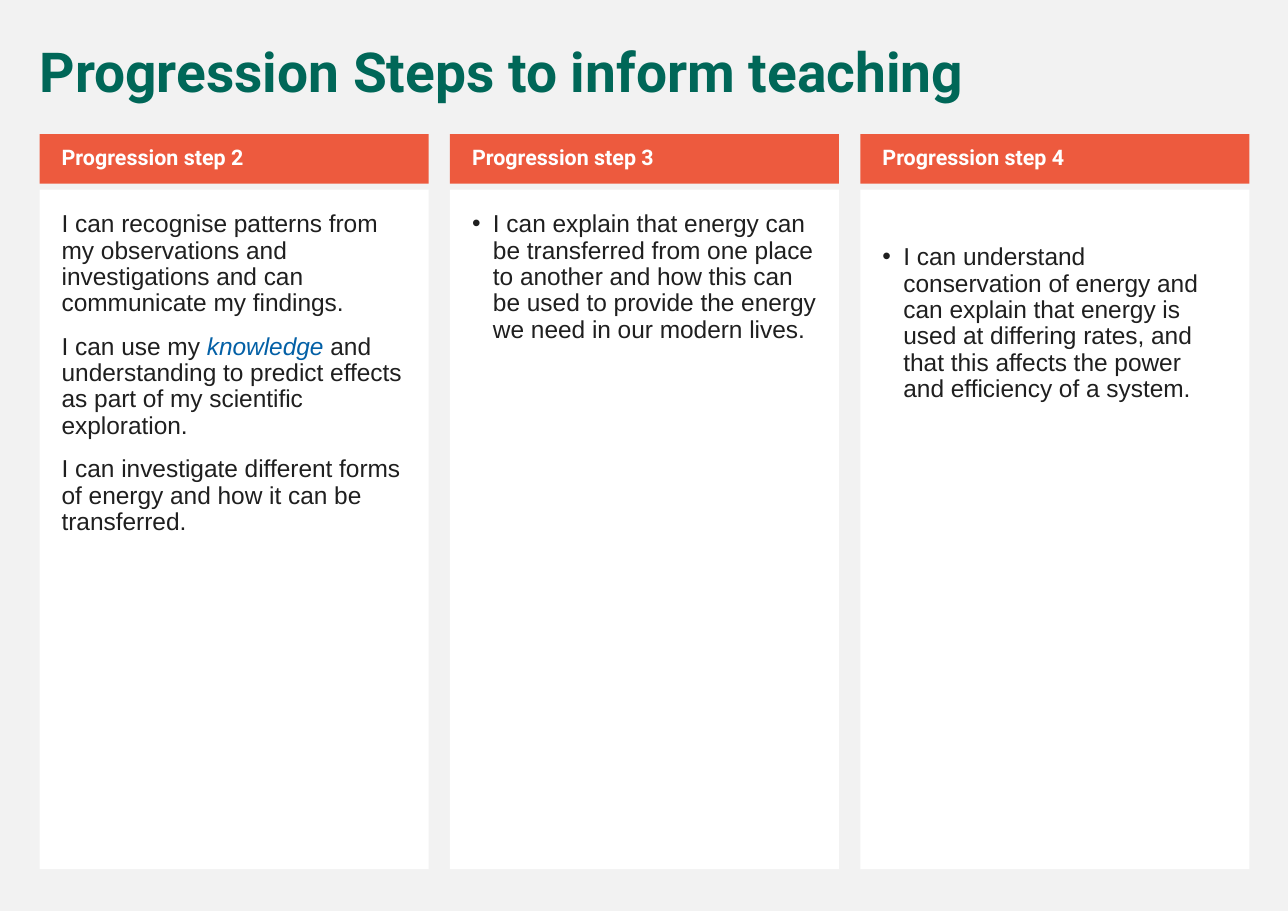
from lxml.etree import SubElement
from pptx import Presentation
from pptx.dml.color import RGBColor as RGB
from pptx.enum.shapes import MSO_SHAPE as Shape
from pptx.enum.text import MSO_ANCHOR as Anchor, PP_ALIGN as Align
from pptx.oxml.ns import qn
from pptx.util import Pt

COLOURS = {
    "background": "F2F2F2",
    "title": "006758",
    "header": "ED5A3E",
    "panel": "FFFFFF",
    "header_text": "FFFFFF",
    "text": "1F1F1F",
    "keyword": "0360A6",
}

# Layout
SLIDE_WIDTH, SLIDE_HEIGHT = 841.68, 595.44
LEFT, COLUMN_WIDTH, COLUMN_PITCH = 25.9, 254.2, 268.2
HEADER_TOP, HEADER_HEIGHT = 87.6, 32.4
PANEL_TOP, PANEL_HEIGHT = 123.9, 444.2
PADDING = 14.4
BULLET_INDENT = 13.7

# Each step: heading, bulleted, extra space at the top, statements.
# A statement is a list of (text, format) runs.
STEPS = [
    ("Progression step 2", False, 0, [
        [("I can recognise patterns from my observations and investigations "
          "and can communicate my findings.", {})],
        [("I can use my ", {}),
         ("knowledge", {"colour": "keyword", "italic": True}),
         (" and understanding to predict effects as part of my scientific "
          "exploration.", {})],
        [("I can investigate different forms of energy and how it can be "
          "transferred.", {})],
    ]),
    ("Progression step 3", True, 0, [
        [("I can explain that energy can be transferred from one place to "
          "another and how this can be used to provide the energy we need in "
          "our modern lives.", {})],
    ]),
    ("Progression step 4", True, 21.6, [
        [("I can understand conservation of energy and can explain that "
          "energy is used at differing rates, and that this affects the power "
          "and efficiency of a system.", {})],
    ]),
]


def add_run(paragraph, text, font="Arial", size=16, colour="text",
            bold=False, italic=False):
    run = paragraph.add_run()
    run.text = text
    run.font.name = font
    run.font.size = Pt(size)
    run.font.bold = bold
    run.font.italic = italic
    run.font.color.rgb = RGB.from_string(COLOURS[colour])


class Page:
    """Holds the slide and draws its parts in one style."""

    def __init__(self, slide):
        self.slide = slide
        fill = slide.background.fill
        fill.solid()
        fill.fore_color.rgb = RGB.from_string(COLOURS["background"])

    def frame(self, shape, insets, anchor=Anchor.TOP):
        frame = shape.text_frame
        frame.word_wrap = True
        frame.vertical_anchor = anchor
        (frame.margin_left, frame.margin_top,
         frame.margin_right, frame.margin_bottom) = map(Pt, insets)
        return frame

    def paragraph(self, frame, first=True, bulleted=False):
        paragraph = frame.paragraphs[0] if first else frame.add_paragraph()
        paragraph.alignment = Align.LEFT
        paragraph.line_spacing = 0.9
        paragraph.space_before = Pt(11)
        if bulleted:
            properties = paragraph._p.get_or_add_pPr()
            properties.set("marL", str(Pt(BULLET_INDENT)))
            properties.set("indent", str(-Pt(BULLET_INDENT)))
            SubElement(properties, qn("a:buFont"), typeface="Arial")
            SubElement(properties, qn("a:buChar"), char="•")
        return paragraph

    def box(self, left, top, height, colour):
        box = self.slide.shapes.add_shape(
            Shape.RECTANGLE, Pt(left), Pt(top), Pt(COLUMN_WIDTH), Pt(height))
        box.shadow.inherit = False
        box.fill.solid()
        box.fill.fore_color.rgb = RGB.from_string(COLOURS[colour])
        box.line.fill.background()
        return box

    def title(self, text):
        title = self.slide.shapes.add_textbox(
            Pt(18.7), Pt(25.9), Pt(797.8), Pt(46.8))
        frame = self.frame(title, (7.2, 3.6, 7.2, 3.6))
        add_run(self.paragraph(frame), text, font="Roboto", size=36,
                colour="title", bold=True)

    def header(self, left, text):
        header = self.box(left, HEADER_TOP, HEADER_HEIGHT, "header")
        frame = self.frame(header, (PADDING, 3.6, 7.2, 3.6), Anchor.MIDDLE)
        add_run(self.paragraph(frame), text, font="Roboto", size=14,
                colour="header_text", bold=True)

    def panel(self, left, statements, bulleted, extra_top):
        panel = self.box(left, PANEL_TOP, PANEL_HEIGHT, "panel")
        frame = self.frame(
            panel, (PADDING, PADDING + extra_top, PADDING, PADDING))
        for index, statement in enumerate(statements):
            paragraph = self.paragraph(frame, index == 0, bulleted)
            for text, style in statement:
                add_run(paragraph, text, **style)


def main():
    deck = Presentation()
    deck.slide_width, deck.slide_height = Pt(SLIDE_WIDTH), Pt(SLIDE_HEIGHT)
    page = Page(deck.slides.add_slide(deck.slide_layouts[6]))

    # Title
    page.title("Progression Steps to inform teaching")

    # One column per progression step
    for column, (heading, bulleted, extra_top, statements) in enumerate(STEPS):
        left = LEFT + column * COLUMN_PITCH
        page.panel(left, statements, bulleted, extra_top)
        page.header(left, heading)

    deck.save("out.pptx")


if __name__ == "__main__":
    main()
